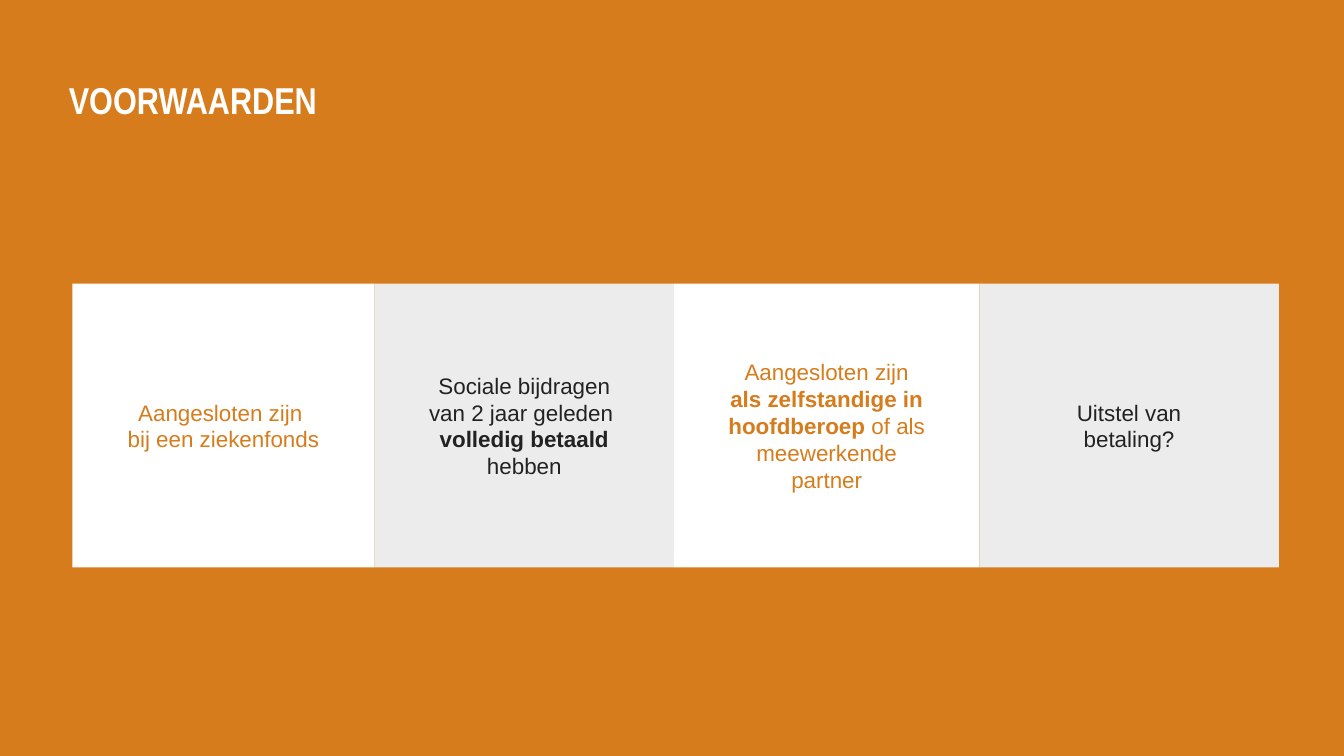
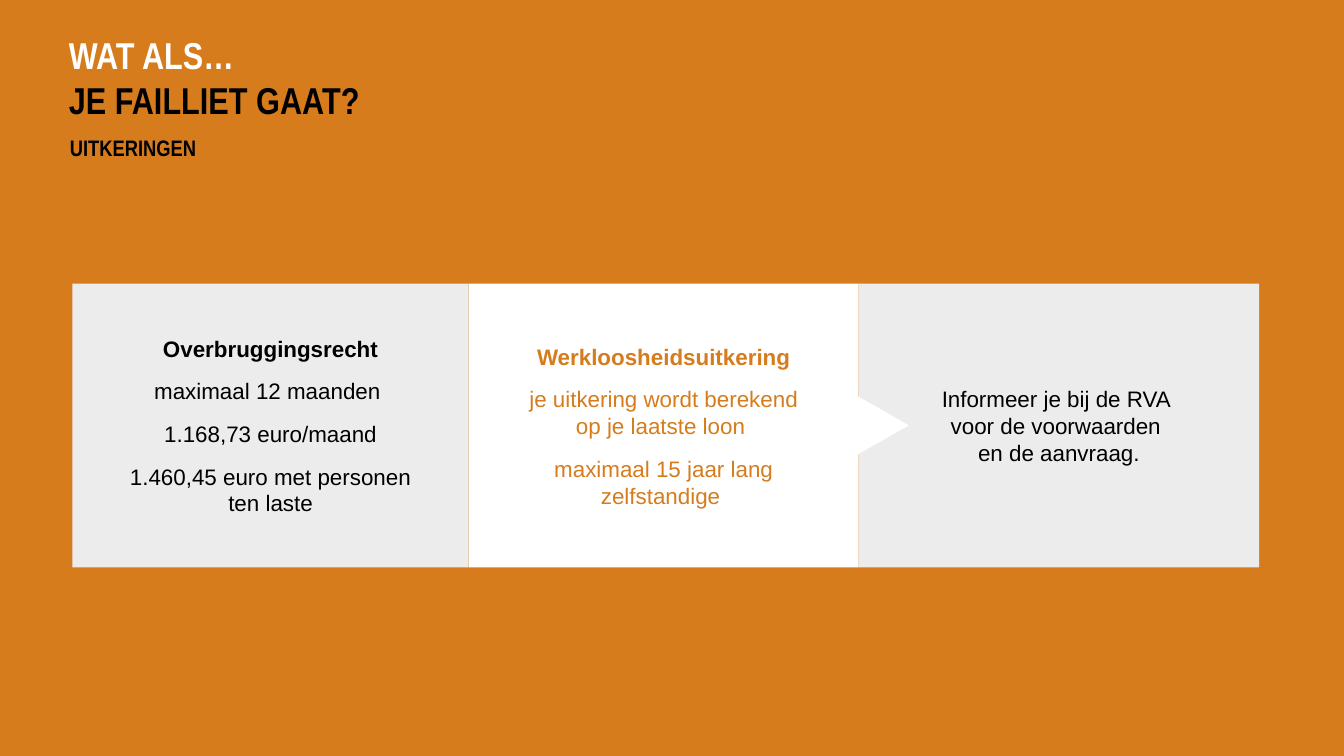
"""Builds two slides on social benefits for the self-employed."""
import pptx
import pptx.dml.color
import pptx.enum.shapes
import pptx.enum.text
import pptx.util

Cm = pptx.util.Cm
Pt = pptx.util.Pt
SHAPES = pptx.enum.shapes.MSO_SHAPE
ANCHOR = pptx.enum.text.MSO_ANCHOR
ALIGN = pptx.enum.text.PP_ALIGN

COLORS = {
    "orange": "D67C1C",
    "white": "FFFFFF",
    "grey": "ECECEC",
    "dark": "222220",
    "black": "000000",
}
BAND_LEFT, BAND_TOP, BAND_HEIGHT = 1.37, 5.36, 5.36
PADDING = 1


def add_text(paragraph, text, font="Arial", size=12, color="black", bold=False):
    for number, line in enumerate(text.split("\n")):
        if number:
            paragraph.add_line_break()
        if line:
            run = paragraph.add_run()
            run.text = line
            run.font.name = font
            run.font.size = Pt(size)
            run.font.bold = bold
            run.font.color.rgb = pptx.dml.color.RGBColor.from_string(COLORS[color])


def add_panel(slide, kind, left, top, width, height, fill):
    shape = slide.shapes.add_shape(kind, Cm(left), Cm(top), Cm(width), Cm(height))
    shape.shadow.inherit = False
    shape.fill.solid()
    shape.fill.fore_color.rgb = pptx.dml.color.RGBColor.from_string(COLORS[fill])
    shape.line.fill.background()
    return shape


slides = [
    {
        "title": [("VOORWAARDEN", "white")],
        "subtitle": None,
        "panels": [
            (5.71, "white", "orange", [[("Aangesloten zijn \nbij een ziekenfonds", False)]]),
            (5.66, "grey", "dark", [[
                ("Sociale bijdragen van 2 jaar geleden \n", False),
                ("volledig betaald ", True),
                ("hebben", False),
            ]]),
            (5.77, "white", "orange", [[
                ("Aangesloten zijn ", False),
                ("als zelfstandige in hoofdberoep", True),
                (" of als meewerkende partner", False),
            ]]),
            (5.66, "grey", "dark", [[("Uitstel van betaling?", False)]]),
        ],
    },
    {
        "title": [("WAT ALS…\n", "white"), ("JE FAILLIET GAAT?", "black")],
        "subtitle": "UITKERINGEN",
        "panels": [
            (7.49, "grey", "black", [
                [("Overbruggingsrecht", True)],
                [("maximaal 12 maanden ", False)],
                [("1.168,73 euro/maand", False)],
                [("1.460,45 euro met personen ten laste", False)],
            ]),
            (7.37, "white", "orange", [
                [("Werkloosheidsuitkering", True)],
                [("je uitkering wordt berekend op je laatste loon ", False)],
                [("maximaal 15 jaar lang zelfstandige ", False)],
            ]),
            (7.57, "grey", "black", [
                [("Informeer je bij de RVA \nvoor de voorwaarden \nen de aanvraag.", False)],
            ]),
        ],
    },
]

presentation = pptx.Presentation()
presentation.slide_width = Cm(25.4)
presentation.slide_height = Cm(14.28)
background = presentation.slide_master.background.fill
background.solid()
background.fore_color.rgb = pptx.dml.color.RGBColor.from_string(COLORS["orange"])

for content in slides:
    slide = presentation.slides.add_slide(presentation.slide_layouts[5])
    title = slide.shapes.title
    title.left, title.top, title.width, title.height = Cm(1.3), Cm(0.76), Cm(11.25), Cm(1.55)
    headings = [(title, content["title"], 20, ANCHOR.BOTTOM)]
    if content["subtitle"]:
        subtitle = slide.shapes.add_textbox(Cm(1.32), Cm(2.54), Cm(11.23), Cm(1.35))
        headings.append((subtitle, [(content["subtitle"], "black")], 12, ANCHOR.TOP))
    for shape, parts, size, anchor in headings:
        frame = shape.text_frame
        frame.auto_size = pptx.enum.text.MSO_AUTO_SIZE.NONE
        frame.word_wrap = True
        frame.vertical_anchor = anchor
        frame.margin_left = frame.margin_right = frame.margin_top = frame.margin_bottom = 0
        frame.paragraphs[0].alignment = ALIGN.LEFT
        for text, color in parts:
            add_text(frame.paragraphs[0], text, font="Arial Narrow", size=size, color=color, bold=True)

    left = BAND_LEFT
    for width, fill, color, paragraphs in content["panels"]:
        panel = add_panel(slide, SHAPES.RECTANGLE, left, BAND_TOP, width, BAND_HEIGHT, fill)
        left += width
        frame = panel.text_frame
        frame.word_wrap = True
        frame.vertical_anchor = ANCHOR.MIDDLE
        frame.margin_left = frame.margin_right = frame.margin_top = frame.margin_bottom = Cm(PADDING)
        for number, parts in enumerate(paragraphs):
            paragraph = frame.add_paragraph() if number else frame.paragraphs[0]
            paragraph.alignment = ALIGN.CENTER
            paragraph.space_before = Pt(2.4 if number else 0)
            paragraph.space_after = Pt(6)
            for text, bold in parts:
                add_text(paragraph, text, color=color, bold=bold)

pointer = add_panel(slide, SHAPES.ISOSCELES_TRIANGLE, 16.03, 7.5, 1.22, 1.07, "white")
pointer.rotation = 90

presentation.save("out.pptx")
